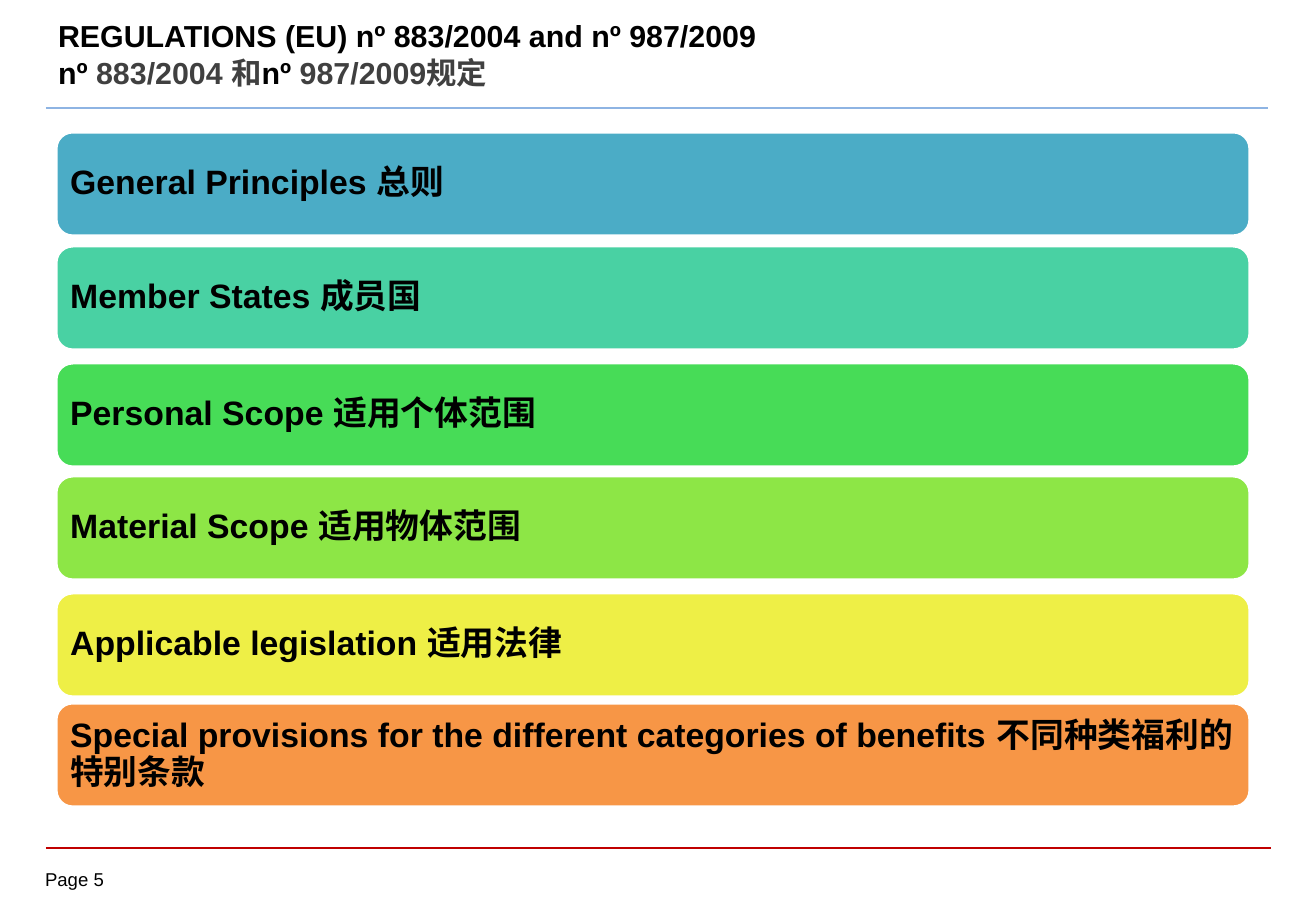
from lxml.etree import SubElement
from pptx import Presentation
from pptx.dml.color import RGBColor
from pptx.enum.shapes import MSO_CONNECTOR as Connector, MSO_SHAPE as Shape
from pptx.enum.text import MSO_ANCHOR as Anchor, PP_ALIGN as Align
from pptx.oxml.ns import qn
from pptx.util import Pt

EMU_PER_PX = 7526
COLORS = {
    "black": "000000", "gray": "404040", "white": "FFFFFF",
    "blue_rule": "8EB4E3", "red_rule": "C00000",
    "teal": "4BACC6", "mint": "49D1A3", "green": "47DC57",
    "lime": "8DE646", "yellow": "EEEF46", "orange": "F79646",
}
TITLE_LINES = [
    [("REGULATIONS (EU) nº 883/2004 and nº 987/2009", "black")],
    [("nº ", "black"), ("883/2004 和", "gray"),
     ("nº ", "black"), ("987/2009规定", "gray")],
]
CHAPTERS = [
    (0, "teal", "General Principles 总则"),
    (114, "mint", "Member States 成员国"),
    (231, "green", "Personal Scope 适用个体范围"),
    (344, "lime", "Material Scope 适用物体范围"),
    (461, "yellow", "Applicable legislation 适用法律"),
    (571, "orange", "Special provisions for the different categories of benefits 不同种类福利的特别条款"),
]


def px(length):
    return length * EMU_PER_PX


def color(name):
    return RGBColor.from_string(COLORS[name])


def write(shape, lines, size, bold=False, inset=(0, 0), anchor=Anchor.TOP, spacing=1.0):
    frame = shape.text_frame
    frame.word_wrap = True
    frame.vertical_anchor = anchor
    frame.margin_left = frame.margin_right = px(inset[0])
    frame.margin_top = frame.margin_bottom = px(inset[1])
    para = frame.paragraphs[0]
    para.alignment = Align.LEFT
    para.line_spacing = spacing
    for index, spans in enumerate(lines):
        if index:
            para.add_line_break()
        for text, tone in spans:
            span = para.add_run()
            span.text = text
            span.font.name = "Arial"
            span.font.size = Pt(size)
            span.font.bold = bold
            span.font.color.rgb = color(tone)


def add_rule(page, left, top, width, tone, weight):
    rule = page.shapes.add_connector(
        Connector.STRAIGHT, px(left), px(top), px(left + width), px(top))
    rule.line.color.rgb = color(tone)
    rule.line.width = Pt(weight)
    SubElement(rule._element.spPr, qn("a:effectLst"))


def add_header(page, left, top, width, height):
    box = page.shapes.add_textbox(px(left), px(top), px(width), px(height))
    write(box, TITLE_LINES, 18, bold=True, inset=(12, 6), anchor=Anchor.MIDDLE)
    add_rule(page, left, top + 97, width + 17, "blue_rule", 1.5)


def add_chapters(page, left, top, width, bar_height):
    for offset, fill, text in CHAPTERS:
        bar = page.shapes.add_shape(
            Shape.ROUNDED_RECTANGLE, px(left), px(top + offset), px(width), px(bar_height))
        bar.shadow.inherit = False
        bar.fill.solid()
        bar.fill.fore_color.rgb = color(fill)
        bar.line.color.rgb = color("white")
        bar.line.width = Pt(3)
        write(bar, [[(text, "black")]], 20, bold=True, inset=(10, 10),
              anchor=Anchor.MIDDLE, spacing=0.9)


def add_footer(page, left, top, width):
    add_rule(page, left, top, width, "red_rule", 1)
    box = page.shapes.add_textbox(px(left - 1), px(top + 20), px(89), px(27))
    write(box, [[("Page 5", "black")]], 11)


def main():
    deck = Presentation()
    deck.slide_width = px(1316)
    deck.slide_height = px(911)
    page = deck.slides.add_slide(deck.slide_layouts[6])
    add_header(page, 46, 11, 1205, 86)
    add_chapters(page, 55, 131, 1196, 106)
    add_footer(page, 46, 848, 1225)
    deck.save("out.pptx")


if __name__ == "__main__":
    main()
